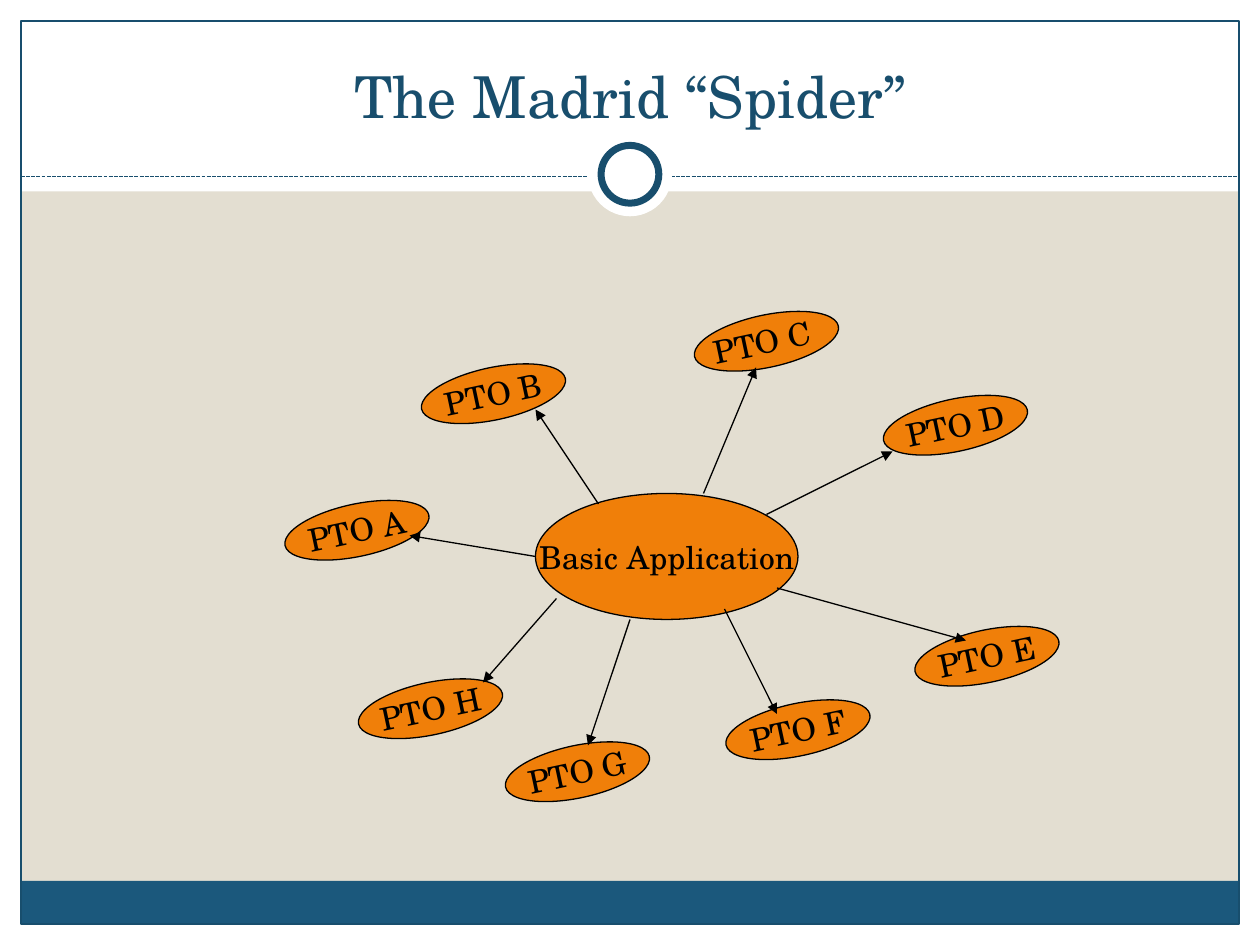
from lxml import etree
from pptx import Presentation
from pptx.dml.color import RGBColor
from pptx.enum.dml import MSO_LINE
from pptx.enum.shapes import MSO_CONNECTOR, MSO_SHAPE
from pptx.enum.text import MSO_ANCHOR, PP_ALIGN
from pptx.oxml.ns import qn
from pptx.util import Inches, Pt

RECT, OVAL = MSO_SHAPE.RECTANGLE, MSO_SHAPE.OVAL
LINE, DASH = MSO_CONNECTOR.STRAIGHT, MSO_LINE.SQUARE_DOT
MID, LOW, CENTER = MSO_ANCHOR.MIDDLE, MSO_ANCHOR.BOTTOM, PP_ALIGN.CENTER

THEME = {
    "font": "TeX Gyre Schola", "title": Pt(33), "label": Pt(18),
    "thin": Pt(0.75), "ring": Pt(4),
    "sand": RGBColor.from_string("E3DED1"),
    "white": RGBColor.from_string("FFFFFF"),
    "navy": RGBColor.from_string("184E6D"),
    "blue": RGBColor.from_string("1B587C"),
    "orange": RGBColor.from_string("F07F09"),
    "black": RGBColor.from_string("000000"),
}

deck = Presentation()
deck.slide_width, deck.slide_height = Inches(10), Inches(7.5)
COLS, ROWS = 120, 90
UNIT = deck.slide_width / COLS
slide = deck.slides.add_slide(deck.slide_layouts[5])
slide.background.fill.solid()
slide.background.fill.fore_color.rgb = THEME["sand"]


def draw(kind, box, fill=None, edge=None, width="thin"):
    shape = slide.shapes.add_shape(kind, *[round(n * UNIT) for n in box])
    shape.shadow.inherit = False
    if fill:
        shape.fill.solid()
        shape.fill.fore_color.rgb = THEME[fill]
    else:
        shape.fill.background()
    if edge:
        shape.line.color.rgb = THEME[edge]
        shape.line.width = THEME[width]
    else:
        shape.line.fill.background()
    return shape


def link(start, end, color):
    line = slide.shapes.add_connector(
        LINE, *[round(n * UNIT) for n in (*start, *end)])
    line.line.color.rgb = THEME[color]
    line.line.width = THEME["thin"]
    etree.SubElement(line._element.spPr, qn("a:effectLst"))
    return line


EDGE, HEAD, FOOT = 2, 18.24, 4.1
wide, high = COLS - 2 * EDGE, ROWS - 2 * EDGE
for box in ((0, ROWS - EDGE, COLS, EDGE), (0, 0, COLS, HEAD),
            (0, 0, EDGE, ROWS), (COLS - EDGE, 0, EDGE, ROWS)):
    draw(RECT, box, "white")
draw(RECT, (EDGE, ROWS - EDGE - FOOT, wide, FOOT), "blue")
draw(RECT, (EDGE, EDGE, wide, high), edge="navy")
link((EDGE, 16.8), (COLS - EDGE, 16.8), "navy").line.dash_style = DASH
for size, edge in ((8, None), (5.5, "navy")):
    draw(OVAL, (COLS / 2 - size / 2, 16.6 - size / 2, size, size),
         "white", edge, "ring")

title = slide.shapes.title
title.left, title.top, title.width, title.height = [
    round(n * UNIT) for n in (4, 3, 112, 10)]
title.text_frame.text = "The Madrid “Spider”"
title.text_frame.vertical_anchor = LOW
para = title.text_frame.paragraphs[0]
para.alignment = CENTER
para.font.name, para.font.size = THEME["font"], THEME["title"]
para.font.color.rgb = THEME["navy"]
slide.shapes._spTree.append(title._element)

OFFICES = [
    ("PTO A", (27, 48), (51, 53), (39, 51)),
    ("PTO B", (40, 35), (57, 48), (51, 39)),
    ("PTO C ", (66, 30), (67, 47), (72, 35)),
    ("PTO D", (84, 38), (73, 49), (85, 43)),
    ("PTO E", (87, 60), (74, 56), (92, 61)),
    ("PTO F", (69, 67), (69, 58), (74, 68)),
    ("PTO G", (48, 71), (60, 59), (56, 71)),
    ("PTO H", (34, 65), (53, 57), (46, 65)),
]
nodes = [("Basic Application", (51, 47, 25, 12), 0)]
nodes += [(name, (*spot, 14, 5), -12) for name, spot, *_ in OFFICES]
for name, box, turn in nodes:
    node = draw(OVAL, box, "orange", "black")
    node.rotation = turn
    frame = node.text_frame
    frame.word_wrap = False
    frame.vertical_anchor = MID
    frame.text = name
    para = frame.paragraphs[0]
    para.alignment = CENTER
    para.font.name, para.font.size = THEME["font"], THEME["label"]
    para.font.color.rgb = THEME["black"]

for _, _, start, end in OFFICES:
    leg = link(start, end, "black")
    etree.SubElement(leg.line._get_or_add_ln(), qn("a:tailEnd"), type="triangle")

deck.save("out.pptx")
